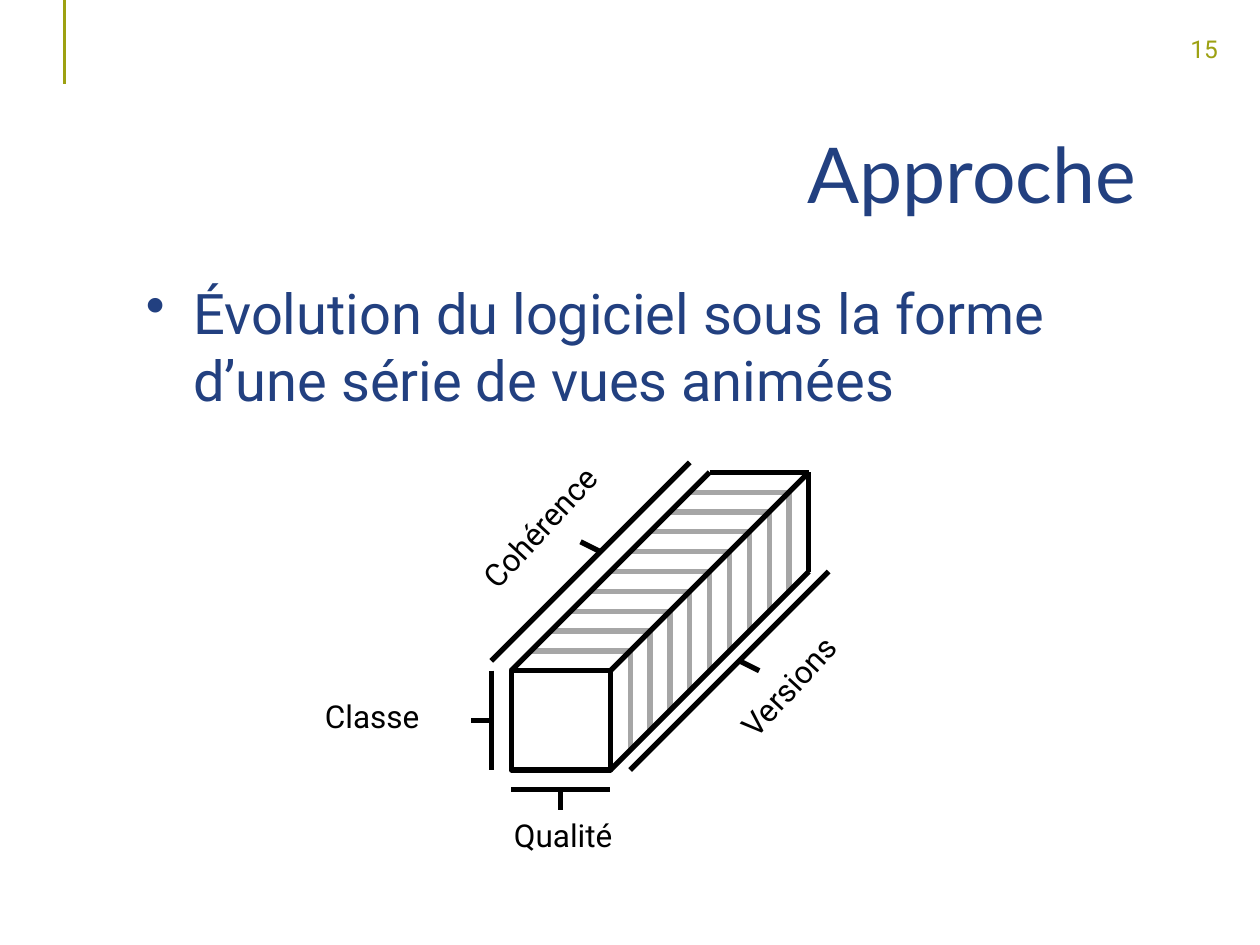
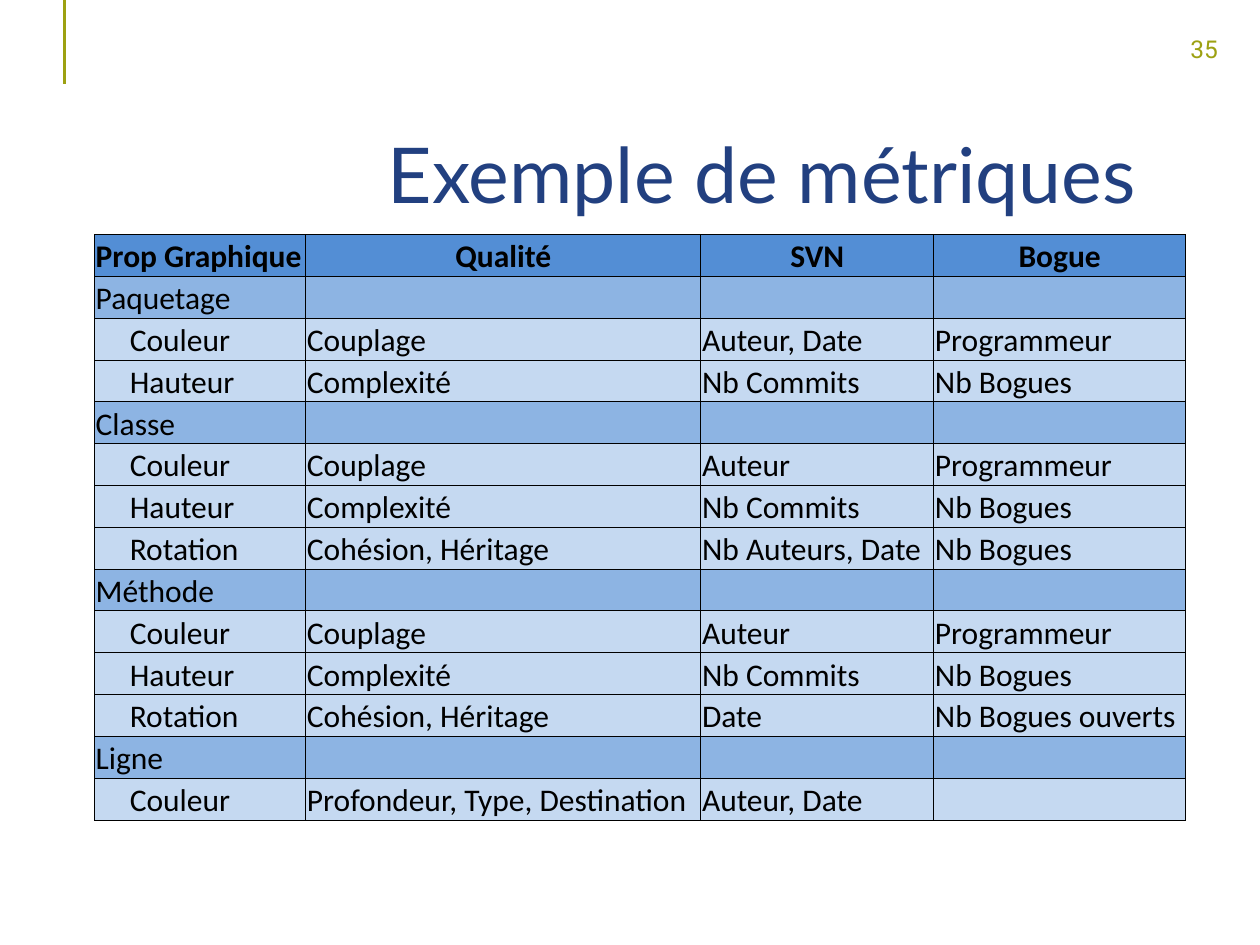
from lxml.etree import SubElement as sub
from pptx import Presentation
from pptx.dml.color import RGBColor
from pptx.enum.shapes import MSO_CONNECTOR as LINK, MSO_SHAPE as SHAPE
from pptx.enum.text import MSO_ANCHOR as ANCHOR, PP_ALIGN as ALIGN
from pptx.oxml.ns import qn
from pptx.util import Pt

BLACK = RGBColor(0x00, 0x00, 0x00)
WHITE = RGBColor(0xFF, 0xFF, 0xFF)
GREY = RGBColor(0xA6, 0xA6, 0xA6)
OLIVE = RGBColor(0x9D, 0xA1, 0x12)
NAVY = RGBColor(0x22, 0x40, 0x80)
HEAD = RGBColor(0x53, 0x8E, 0xD5)
GROUP = RGBColor(0x8D, 0xB4, 0xE3)
ENTRY = RGBColor(0xC5, 0xD9, 0xF1)

# The box is drawn on a grid whose origin is the top left of its front face.
STEP, LEFT, TOP = 11.34, 292.1, 383.3
SIDE, DEPTH = 5, 10

EDGES = [
    (0, 0, 10, -10), (5, 0, 15, -10), (5, 5, 15, -5),
    (10, -10, 15, -10), (15, -10, 15, -5),
]
# Each bracket has a bar and a tick.
MARKS = [
    (0, 6, 5, 6), (2.5, 6, 2.5, 7),
    (-1, 0, -1, 5), (-1, 2.5, -2, 2.5),
    (6, 5, 16, -5), (11.5, -0.5, 12.5, 0),
    (-1, -0.5, 9, -10.5), (3.5, -6.5, 4.5, -6),
]
LABELS = [
    ("Qualité", 286.6, 463, 79.2, 0),
    ("Classe", 178.6, 394.6, 85, 0),
    ("Versions", 408.2, 377.3, 85, 312.7),
    ("Cohérence", 257.8, 285.8, 103, 312.7),
]

WIDTHS = [120.7, 225.8, 133.1, 143.9]
ROW = 23.9
TITLES = ["Prop Graphique", "Qualité", "SVN", "Bogue"]
METRICS = {
    "Paquetage": [
        ("Couleur", "Couplage", "Auteur, Date", "Programmeur"),
        ("Hauteur", "Complexité", "Nb Commits", "Nb Bogues"),
    ],
    "Classe": [
        ("Couleur", "Couplage", "Auteur", "Programmeur"),
        ("Hauteur", "Complexité", "Nb Commits", "Nb Bogues"),
        ("Rotation", "Cohésion, Héritage", "Nb Auteurs, Date", "Nb Bogues"),
    ],
    "Méthode": [
        ("Couleur", "Couplage", "Auteur", "Programmeur"),
        ("Hauteur", "Complexité", "Nb Commits", "Nb Bogues"),
        ("Rotation", "Cohésion, Héritage", "Date", "Nb Bogues ouverts"),
    ],
    "Ligne": [
        ("Couleur", "Profondeur, Type, Destination", "Auteur, Date", ""),
    ],
}


def style(para, name, size, color, bold=False):
    font = para.font
    font.name, font.size, font.bold = name, Pt(size), bold
    font.color.rgb = color


def add_text(slide, text, x, y, w, h, size, color, name="Roboto", wrap=True):
    box = slide.shapes.add_textbox(Pt(x), Pt(y), Pt(w), Pt(h))
    box.text_frame.word_wrap = wrap
    para = box.text_frame.paragraphs[0]
    para.text = text
    style(para, name, size, color)
    return box


def add_line(slide, x1, y1, x2, y2, color=BLACK, width=3):
    line = slide.shapes.add_connector(
        LINK.STRAIGHT, Pt(x1), Pt(y1), Pt(x2), Pt(y2))
    line.line.color.rgb, line.line.width = color, Pt(width)
    sub(line._element.spPr, qn("a:effectLst"))


def grid_line(slide, x1, y1, x2, y2, color=BLACK):
    """Draw a line given in steps of the box's grid."""
    add_line(slide, LEFT + x1 * STEP, TOP + y1 * STEP,
             LEFT + x2 * STEP, TOP + y2 * STEP, color)


def add_slide(deck, title, number):
    """Add a blank slide with the shared rule, page number and title."""
    slide = deck.slides.add_slide(deck.slide_layouts[6])
    add_line(slide, 36.8, 0, 36.8, 48, OLIVE, 1.5)
    add_text(slide, number, 673.2, 15.8, 31, 24, 14, OLIVE, wrap=False)
    box = add_text(slide, title, 76.3, 56.9, 580.3, 90, 44, NAVY, "Lato")
    box.text_frame.vertical_anchor = ANCHOR.MIDDLE
    para = box.text_frame.paragraphs[0]
    para.alignment, para.line_spacing = ALIGN.RIGHT, 0.9
    return slide


def add_bullet(slide, text):
    box = add_text(slide, text, 76.3, 155.5, 580.3, 103.7, 32, NAVY)
    props = box.text_frame.paragraphs[0]._p.get_or_add_pPr()
    props.set("marL", str(Pt(27)))
    props.set("indent", str(-Pt(27)))
    mark = props.makeelement(qn("a:buChar"), {"char": "•"})
    props.find(qn("a:defRPr")).addprevious(mark)


def add_box(slide):
    """Draw the striped box with its four labelled brackets."""
    for i in range(1, DEPTH):
        grid_line(slide, i, -i, SIDE + i, -i, GREY)
        grid_line(slide, SIDE + i, -i, SIDE + i, SIDE - i, GREY)
    front = slide.shapes.add_shape(
        SHAPE.RECTANGLE, Pt(LEFT), Pt(TOP), Pt(SIDE * STEP), Pt(SIDE * STEP))
    front.shadow.inherit = False
    front.fill.solid()
    front.fill.fore_color.rgb = WHITE
    front.line.color.rgb, front.line.width = BLACK, Pt(3)
    for ends in EDGES + MARKS:
        grid_line(slide, *ends)
    for text, x, y, width, turn in LABELS:
        label = add_text(slide, text, x, y, width, 28.8, 18, BLACK)
        label.rotation = turn


def add_border(cell):
    props = cell._tc.get_or_add_tcPr()
    for side in "LRTB":
        edge = sub(props, qn(f"a:ln{side}"), w=str(Pt(0.5)))
        fill = sub(edge, qn("a:solidFill"))
        sub(fill, qn("a:srgbClr"), val=str(BLACK))


def fill_row(row, texts, color, inset=0.72, head=False):
    for i, (cell, text) in enumerate(zip(row.cells, texts)):
        cell.margin_left = Pt(0.72 if i else inset)
        cell.margin_right = cell.margin_top = Pt(0.72)
        cell.margin_bottom = 0
        cell.vertical_anchor = ANCHOR.BOTTOM
        add_border(cell)
        cell.fill.solid()
        cell.fill.fore_color.rgb = color
        para = cell.text_frame.paragraphs[0]
        para.text = text
        para.alignment = ALIGN.CENTER if head and i else ALIGN.LEFT
        style(para, "Calibri", 18, BLACK, head)


def add_metrics(slide):
    count = 1 + sum(1 + len(items) for items in METRICS.values())
    table = slide.shapes.add_table(
        count, len(WIDTHS), Pt(54), Pt(134),
        Pt(sum(WIDTHS)), Pt(count * ROW)).table
    table.first_row = table.horz_banding = False
    for col, width in zip(table.columns, WIDTHS):
        col.width = Pt(width)
    for row in table.rows:
        row.height = Pt(ROW)
    rows = iter(table.rows)
    fill_row(next(rows), TITLES, HEAD, head=True)
    for group, items in METRICS.items():
        fill_row(next(rows), [group, "", "", ""], GROUP)
        for item in items:
            fill_row(next(rows), item, ENTRY, inset=20.2)


def main():
    deck = Presentation()
    deck.slide_width, deck.slide_height = Pt(720), Pt(540)
    slide = add_slide(deck, "Approche", "15")
    add_box(slide)
    add_bullet(slide, "Évolution du logiciel sous la forme "
                      "d’une série de vues animées")
    add_metrics(add_slide(deck, "Exemple de métriques", "35"))
    deck.save("out.pptx")


if __name__ == "__main__":
    main()
